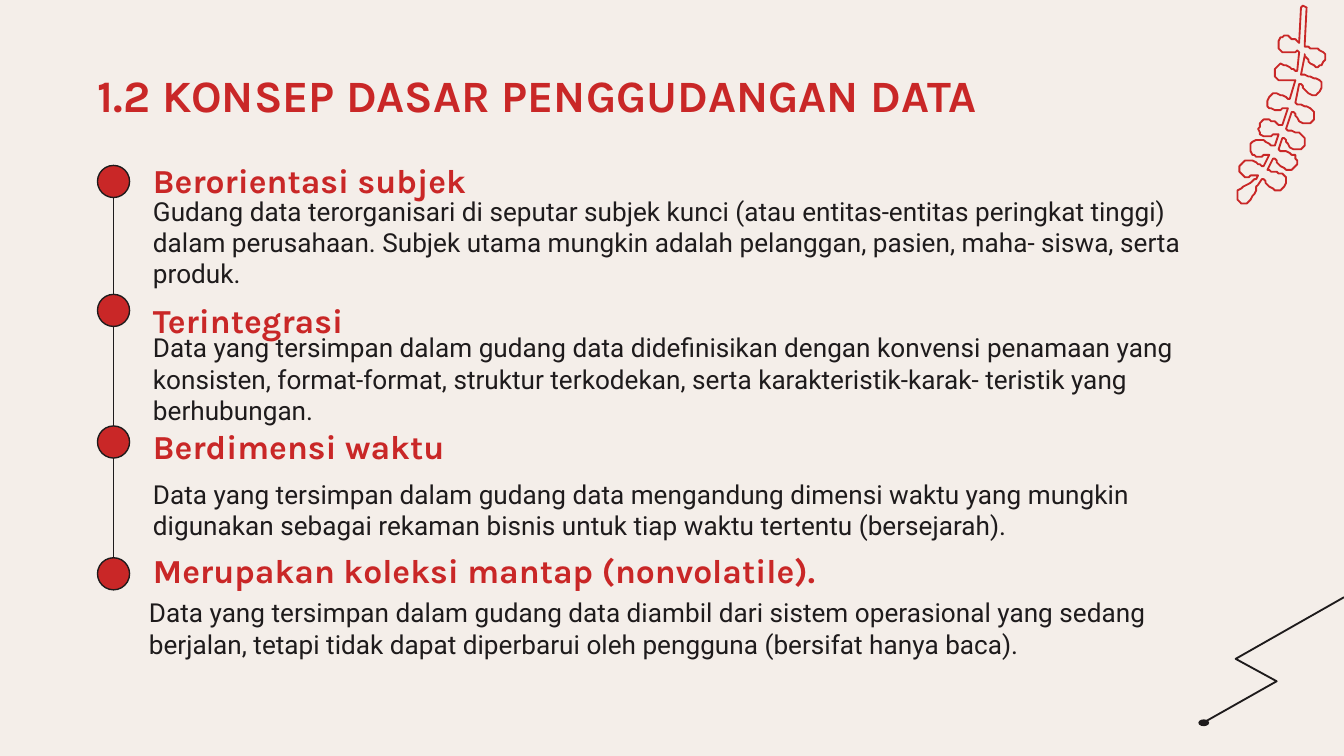
from math import cos, hypot, pi, sin

from pptx import Presentation
from pptx.dml.color import RGBColor
from pptx.enum import shapes as kinds, text as txt
from pptx.oxml.ns import qn
from pptx.util import Pt

HUES = {"red": "C92727", "ink": "1E1B1C", "paper": "F4EEE9"}
hue = {name: RGBColor.from_string(code) for name, code in HUES.items()}

deck = Presentation()
deck.slide_width, deck.slide_height = Pt(720), Pt(405)
slide = deck.slides.add_slide(deck.slide_layouts[6])
slide.background.fill.solid()
slide.background.fill.fore_color.rgb = hue["paper"]
items = slide.shapes


def write(words, left, top, width, height, font, size, tint, anchor, pad):
    frame = items.add_textbox(Pt(left), Pt(top), Pt(width), Pt(height)).text_frame
    frame.word_wrap = True
    frame.vertical_anchor = anchor
    frame.margin_left = frame.margin_right = Pt(7.2)
    frame.margin_top = frame.margin_bottom = Pt(pad)
    para = frame.paragraphs[0]
    para.text = words
    para.font.name, para.font.size = font, Pt(size)
    para.font.bold = font == "Karla"
    para.font.color.rgb = hue[tint]


def paint(shape, fill, line, width=0.75):
    shape.shadow.inherit = False
    if fill:
        shape.fill.solid()
        shape.fill.fore_color.rgb = hue[fill]
    else:
        shape.fill.background()
    shape.line.color.rgb = hue[line]
    shape.line.width = Pt(width)


write("1.2 KONSEP DASAR PENGGUDANGAN DATA", 45.4, 32.4, 582.5, 36.7,
      "Karla", 24, "red", txt.MSO_ANCHOR.MIDDLE, 7.2)

for top, end in [(105.8, 157.7), (175, 298.8)]:
    link = items.add_connector(kinds.MSO_CONNECTOR.STRAIGHT,
                               Pt(60.8), Pt(top), Pt(60.8), Pt(end))
    link.line.color.rgb = hue["ink"]
    link.line.width = Pt(0.75)
    props = link._element.spPr
    props.append(props.makeelement(qn("a:effectLst"), {}))

points = [
    ("Berorientasi subjek", 76.3, 88.6, 74.9, 97.2,
     "Gudang data terorganisari di seputar subjek kunci (atau entitas-entitas peringkat tinggi) "
     "dalam perusahaan. Subjek utama mungkin adalah pelanggan, pasien, maha- siswa, serta produk."),
    ("Terintegrasi", 151.2, 157.7, 74.9, 170.6,
     "Data yang tersimpan dalam gudang data didefinisikan dengan konvensi penamaan yang konsisten, "
     "format-format, struktur terkodekan, serta karakteristik-karak- teristik yang berhubungan."),
    ("Berdimensi waktu", 218.9, 228.2, 74.9, 249.1,
     "Data yang tersimpan dalam gudang data mengandung dimensi waktu yang mungkin "
     "digunakan sebagai rekaman bisnis untuk tiap waktu tertentu (bersejarah)."),
    ("Merupakan koleksi mantap (nonvolatile).", 285.1, 298.8, 72.7, 312.5,
     "Data yang tersimpan dalam gudang data diambil dari sistem operasional yang sedang "
     "berjalan, tetapi tidak dapat diperbarui oleh pengguna (bersifat hanya baca)."),
]
for head, top, dot, left, low, body in points:
    write(head, 74.9, top, 573.1, 31, "Karla", 18, "red", txt.MSO_ANCHOR.BOTTOM, 0)
    write(body, left, low, 573.1, 49.7, "Roboto", 14, "ink", txt.MSO_ANCHOR.TOP, 7.2)
    disc = items.add_shape(kinds.MSO_SHAPE.OVAL, Pt(52.2), Pt(dot), Pt(17.2), Pt(17.2))
    paint(disc, "red", "ink")

pen = items.build_freeform(645.1, 387.4, scale=Pt(1))
pen.add_line_segments([(683.6, 365), (662.4, 352.8), (720, 319.7)], close=False)
paint(pen.convert_to_shape(), None, "ink", 1)
tip = items.add_shape(kinds.MSO_SHAPE.OVAL, Pt(642.4), Pt(385.8), Pt(5), Pt(2.9))
paint(tip, "ink", "ink")

nodes = [37.5, 58.5, 80, 99.5, 114.5, 129.5]
lobes = [(y - 3.5, y + 3.5, 2, 2, 14.5, 9) for y in nodes]
lobes.append((137, 133, 2, -2, -14, 15))
lobes += [(y + 1, y - 6, -2, -2, -16, -3) for y in reversed(nodes)]
edge = [(67.5, 5), (69.7, 3.5), (72, 5)]
for start, stop, near, far, dx, dy in lobes:
    reach = hypot(dx, dy)
    for step in range(25):
        part = step / 24
        turn = 2 * pi * part
        y = start + (stop - start) * part
        x = 70 - 30 * ((y - 4) / 124) ** 2.4 + near + (far - near) * part
        out = (1 - cos(turn)) / 2
        side = 7 * sin(turn) * abs(sin(turn / 2)) ** 1.5 / reach
        edge.append((x + dx * out + dy * side, y + dy * out - dx * side))
edge = [(648 + 0.72 * x, 0.72 * y) for x, y in edge]
pen = items.build_freeform(*edge[0], scale=Pt(1))
pen.add_line_segments(edge[1:], close=True)
paint(pen.convert_to_shape(), "paper", "red", 1)

deck.save("out.pptx")
